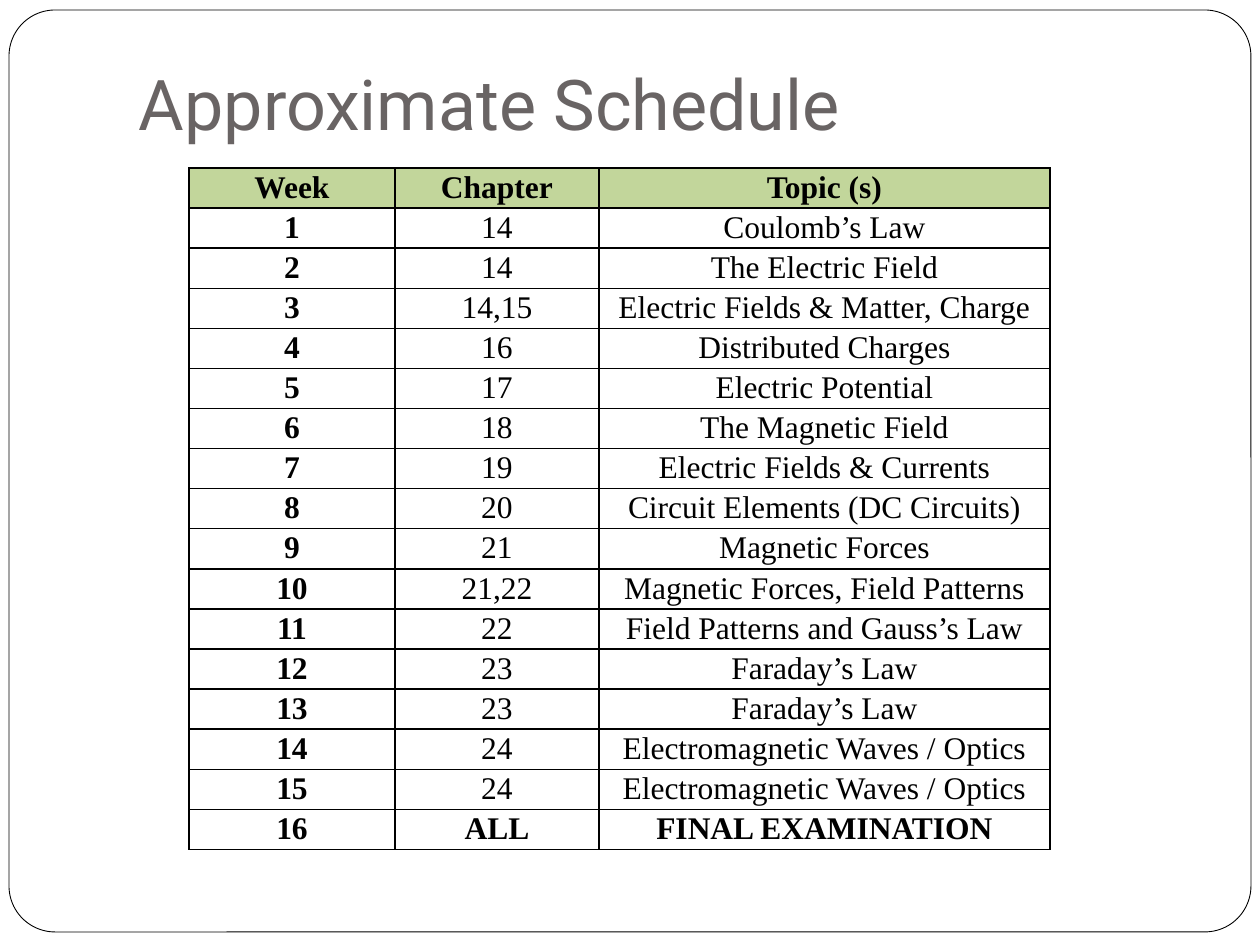
import dataclasses
import typing

import lxml.etree
import pptx
import pptx.dml.color
import pptx.enum.shapes
import pptx.enum.text
import pptx.oxml.ns
import pptx.util

EMU_PER_PX = 914400 / 126


@dataclasses.dataclass(frozen=True)
class Theme:
    title_font: str = "Roboto"
    table_font: str = "Times New Roman"
    title_size: int = 40
    table_size: int = 18
    table_spacing: float = 1.06
    title_color: str = "696464"
    ink: str = "000000"
    paper: str = "FFFFFF"
    header_fill: str = "C2D69B"
    frame_line: float = 0.5
    border_line: float = 1


@dataclasses.dataclass(frozen=True)
class Box:
    left: int
    top: int
    width: int
    height: int


class Week(typing.NamedTuple):
    number: str
    chapter: str
    topic: str


THEME = Theme()
FRAME = Box(9, 10, 1242, 922)
TITLE = Box(126, 38, 1071, 119)
TABLE_LEFT, TABLE_TOP, ROW_HEIGHT = 189, 168, 40
COLUMN_WIDTHS = (206, 204, 451)

HEADER = Week("Week", "Chapter", "Topic (s)")
LESSONS = (
    ("14", "Coulomb’s Law"),
    ("14", "The Electric Field"),
    ("14,15", "Electric Fields & Matter, Charge"),
    ("16", "Distributed Charges"),
    ("17", "Electric Potential"),
    ("18", "The Magnetic Field"),
    ("19", "Electric Fields & Currents"),
    ("20", "Circuit Elements (DC Circuits)"),
    ("21", "Magnetic Forces"),
    ("21,22", "Magnetic Forces, Field Patterns"),
    ("22", "Field Patterns and Gauss’s Law"),
    ("23", "Faraday’s Law"),
    ("23", "Faraday’s Law"),
    ("24", "Electromagnetic Waves / Optics"),
    ("24", "Electromagnetic Waves / Optics"),
    ("ALL", "FINAL EXAMINATION"),
)
SCHEDULE = [HEADER] + [
    Week(str(number), *lesson) for number, lesson in enumerate(LESSONS, start=1)
]


def px(length: int) -> pptx.util.Emu:
    return pptx.util.Emu(round(length * EMU_PER_PX))


def place(box: Box) -> tuple[pptx.util.Emu, ...]:
    return tuple(px(length) for length in dataclasses.astuple(box))


def rgb(color: str) -> pptx.dml.color.RGBColor:
    return pptx.dml.color.RGBColor.from_string(color)


def set_attributes(target: typing.Any, values: dict[str, typing.Any]) -> None:
    for name, value in values.items():
        setattr(target, name, value)


def write_text(paragraph, text: str, color: str, font: dict[str, typing.Any]) -> None:
    run = paragraph.add_run()
    run.text = text
    set_attributes(run.font, font)
    run.font.color.rgb = rgb(color)


def draw_frame(slide) -> None:
    shape = slide.shapes.add_shape(
        pptx.enum.shapes.MSO_SHAPE.ROUNDED_RECTANGLE, *place(FRAME)
    )
    shape.adjustments[0] = 0.05
    shape.shadow.inherit = False
    shape.fill.solid()
    shape.fill.fore_color.rgb = rgb(THEME.paper)
    shape.line.color.rgb = rgb(THEME.ink)
    shape.line.width = pptx.util.Pt(THEME.frame_line)


def draw_title(slide, text: str) -> None:
    text_frame = slide.shapes.add_textbox(*place(TITLE)).text_frame
    set_attributes(text_frame, {
        "word_wrap": True,
        "vertical_anchor": pptx.enum.text.MSO_ANCHOR.BOTTOM,
        "margin_left": px(13),
        "margin_right": px(13),
        "margin_top": px(6),
        "margin_bottom": px(13),
    })
    write_text(text_frame.paragraphs[0], text, THEME.title_color, {
        "name": THEME.title_font,
        "size": pptx.util.Pt(THEME.title_size),
    })


def add_borders(cell) -> None:
    # Border lines must come before the fill in the cell properties
    properties = cell._tc.get_or_add_tcPr()
    qn = pptx.oxml.ns.qn
    for index, side in enumerate(("a:lnL", "a:lnR", "a:lnT", "a:lnB")):
        width = str(pptx.util.Pt(THEME.border_line))
        line = lxml.etree.Element(qn(side), w=width)
        fill = lxml.etree.SubElement(line, qn("a:solidFill"))
        lxml.etree.SubElement(fill, qn("a:srgbClr"), val=THEME.ink)
        properties.insert(index, line)


def fill_cell(cell, text: str, bold: bool, header: bool) -> None:
    set_attributes(cell, {
        "margin_left": px(9),
        "margin_right": px(9),
        "margin_top": 0,
        "margin_bottom": 0,
    })
    if header:
        cell.fill.solid()
        cell.fill.fore_color.rgb = rgb(THEME.header_fill)
    else:
        cell.fill.background()
    add_borders(cell)
    paragraph = cell.text_frame.paragraphs[0]
    set_attributes(paragraph, {
        "alignment": pptx.enum.text.PP_ALIGN.CENTER,
        "line_spacing": THEME.table_spacing,
    })
    write_text(paragraph, text, THEME.ink, {
        "name": THEME.table_font,
        "size": pptx.util.Pt(THEME.table_size),
        "bold": bold,
    })


def draw_schedule(slide, weeks: list[Week]) -> None:
    box = Box(TABLE_LEFT, TABLE_TOP, sum(COLUMN_WIDTHS), ROW_HEIGHT * len(weeks))
    table = slide.shapes.add_table(
        len(weeks), len(COLUMN_WIDTHS), *place(box)
    ).table
    set_attributes(table, {"first_row": False, "horz_banding": False})
    for column, width in zip(table.columns, COLUMN_WIDTHS):
        column.width = px(width)
    for row_index, (row, week) in enumerate(zip(table.rows, weeks)):
        row.height = px(ROW_HEIGHT)
        header = row_index == 0
        emphasized = header or row_index == len(weeks) - 1
        for column_index, (cell, text) in enumerate(zip(row.cells, week)):
            fill_cell(cell, text, emphasized or column_index == 0, header)


def main() -> None:
    presentation = pptx.Presentation()
    presentation.slide_width = px(1260)
    presentation.slide_height = px(945)
    # Layout 6 is the blank one
    slide = presentation.slides.add_slide(presentation.slide_layouts[6])
    draw_frame(slide)
    draw_title(slide, "Approximate Schedule")
    draw_schedule(slide, SCHEDULE)
    presentation.save("out.pptx")


if __name__ == "__main__":
    main()
